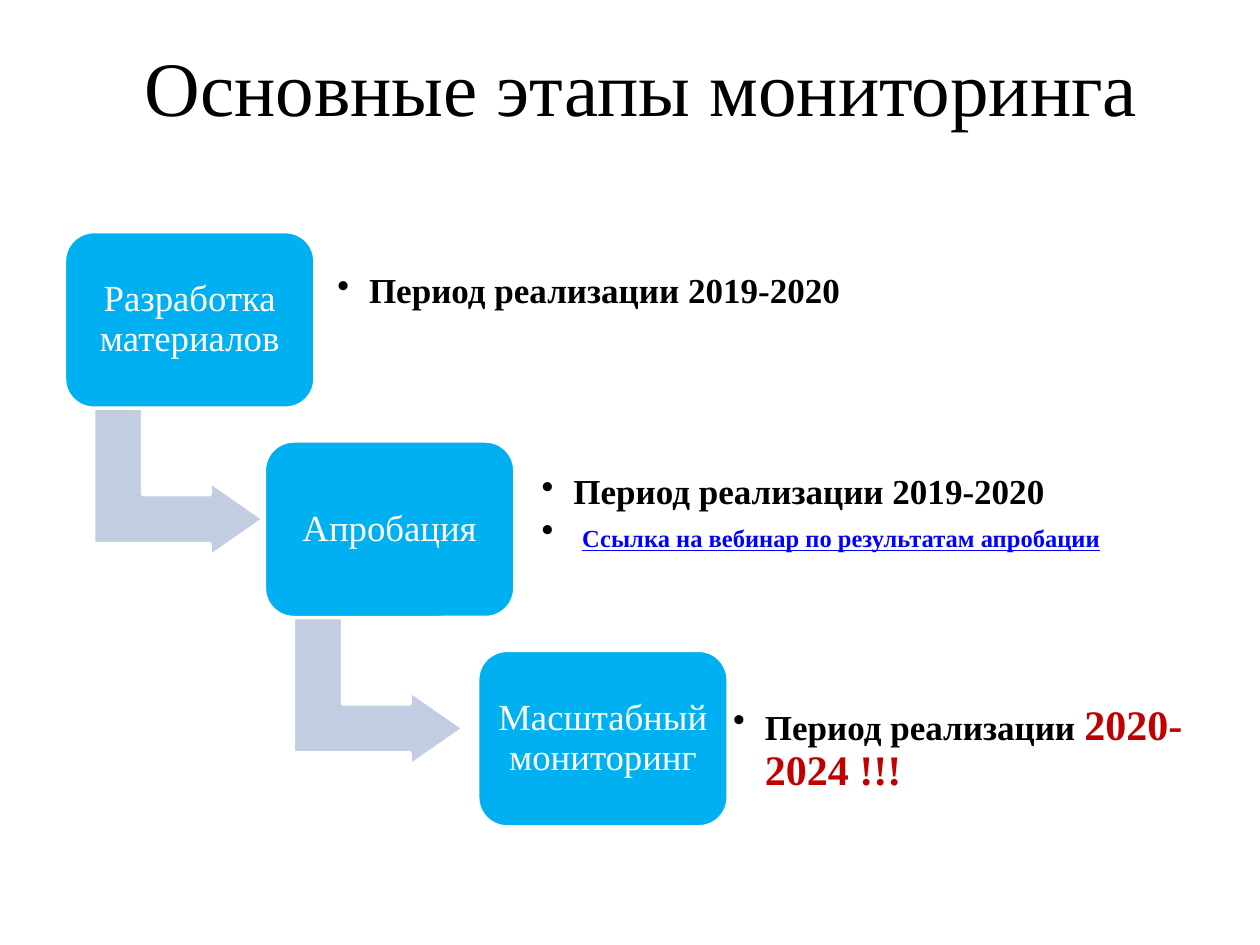
from lxml.etree import SubElement
from pptx import Presentation
from pptx.dml.color import RGBColor
from pptx.enum.shapes import MSO_SHAPE as Shape
from pptx.enum.text import MSO_ANCHOR as Anchor, PP_ALIGN as Align
from pptx.oxml.ns import qn
from pptx.util import Cm, Pt

FONT = "Times New Roman"
BLACK, WHITE, RED, LINK = "000000", "FFFFFF", "C00000", "0000FF"
BLUE, PALE = "00B0F0", "C2CDE1"

BOX_WIDTH, BOX_HEIGHT = 5.05, 3.56
FIRST_TOP, STEP_DOWN = 4.67, 4.22
NOTE_HEIGHT = 2.87

PERIOD = ("Период реализации 2019-2020", {})
# Box left, label, note offset from the box (x, y), note width, note paragraphs
STAGES = [
    (1.3, "Разработка материалов", (5.3, -0.22), 11.15, [[PERIOD]]),
    (5.33, "Апробация", (5.39, 0.05), 12.17, [
        [PERIOD],
        [(" ", {}), ("Ссылка на вебинар по результатам апробации",
                     {"size": 14, "color": LINK, "underline": True})],
    ]),
    (9.63, "Масштабный мониторинг", (4.95, 0.56), 9.47, [
        [("Период реализации ", {}), ("2020-2024 !!!", {"size": 24, "color": RED})],
    ]),
]


def rgb(value):
    return RGBColor.from_string(value)


def add_span(para, text, size=20, color=BLACK, bold=False, underline=None):
    span = para.add_run()
    span.text = text
    font = span.font
    font.name, font.size = FONT, Pt(size)
    font.bold, font.underline = bold, underline
    font.color.rgb = rgb(color)


def prepare_frame(shape, inset):
    frame = shape.text_frame
    frame.word_wrap = True
    frame.vertical_anchor = Anchor.MIDDLE
    frame.margin_left = frame.margin_right = Cm(inset)
    frame.margin_top = frame.margin_bottom = Cm(inset)
    return frame


def add_bullet(para):
    properties = para._p.get_or_add_pPr()
    properties.set("marL", str(Cm(0.64)))
    properties.set("indent", str(-Cm(0.64)))
    SubElement(properties, qn("a:buChar")).set("char", "•")


def add_block(page, kind, left, top, width, height, fill):
    block = page.shapes.add_shape(kind, Cm(left), Cm(top), Cm(width), Cm(height))
    block.shadow.inherit = False
    block.fill.solid()
    block.fill.fore_color.rgb = rgb(fill)
    block.line.color.rgb = rgb(WHITE)
    block.line.width = Pt(2)
    return block


def add_title(page, text, left, top, width, height):
    box = page.shapes.add_textbox(Cm(left), Cm(top), Cm(width), Cm(height))
    para = prepare_frame(box, 0.2).paragraphs[0]
    para.alignment = Align.CENTER
    add_span(para, text, size=44)


def add_arrow(page, left, top):
    """Turned arrow that leads from the box at left, top to the next one."""
    arrow = add_block(page, Shape.BENT_UP_ARROW, left + 0.8, top + 3.33, 3, 3.43, PALE)
    arrow.rotation = 90
    for index, value in enumerate((0.33, 0.25, 0.36)):
        arrow.adjustments[index] = value


def add_stage_box(page, label, left, top):
    box = add_block(page, Shape.ROUNDED_RECTANGLE, left, top, BOX_WIDTH, BOX_HEIGHT, BLUE)
    para = prepare_frame(box, 0.23).paragraphs[0]
    para.alignment = Align.CENTER
    para.line_spacing = 0.9
    add_span(para, label, size=21, color=WHITE)


def add_note(page, paragraphs, left, top, width):
    box = page.shapes.add_textbox(Cm(left), Cm(top), Cm(width), Cm(NOTE_HEIGHT))
    frame = prepare_frame(box, 0.2)
    for index, spans in enumerate(paragraphs):
        para = frame.add_paragraph() if index else frame.paragraphs[0]
        para.line_spacing = 0.9
        para.space_after = Pt(3)
        add_bullet(para)
        for text, style in spans:
            add_span(para, text, **{"bold": True, **style})


def add_stages(page):
    for index, (left, label, (dx, dy), width, paragraphs) in enumerate(STAGES):
        top = FIRST_TOP + index * STEP_DOWN
        if index < len(STAGES) - 1:
            add_arrow(page, left, top)
        add_stage_box(page, label, left, top)
        add_note(page, paragraphs, left + dx, top + dy, width)


def main():
    deck = Presentation()
    deck.slide_width, deck.slide_height = Cm(25.4), Cm(19.05)
    page = deck.slides.add_slide(deck.slide_layouts[6])
    add_title(page, "Основные этапы мониторинга", 1.5, 0.53, 22.86, 2.39)
    add_stages(page)
    deck.save("out.pptx")


if __name__ == "__main__":
    main()
